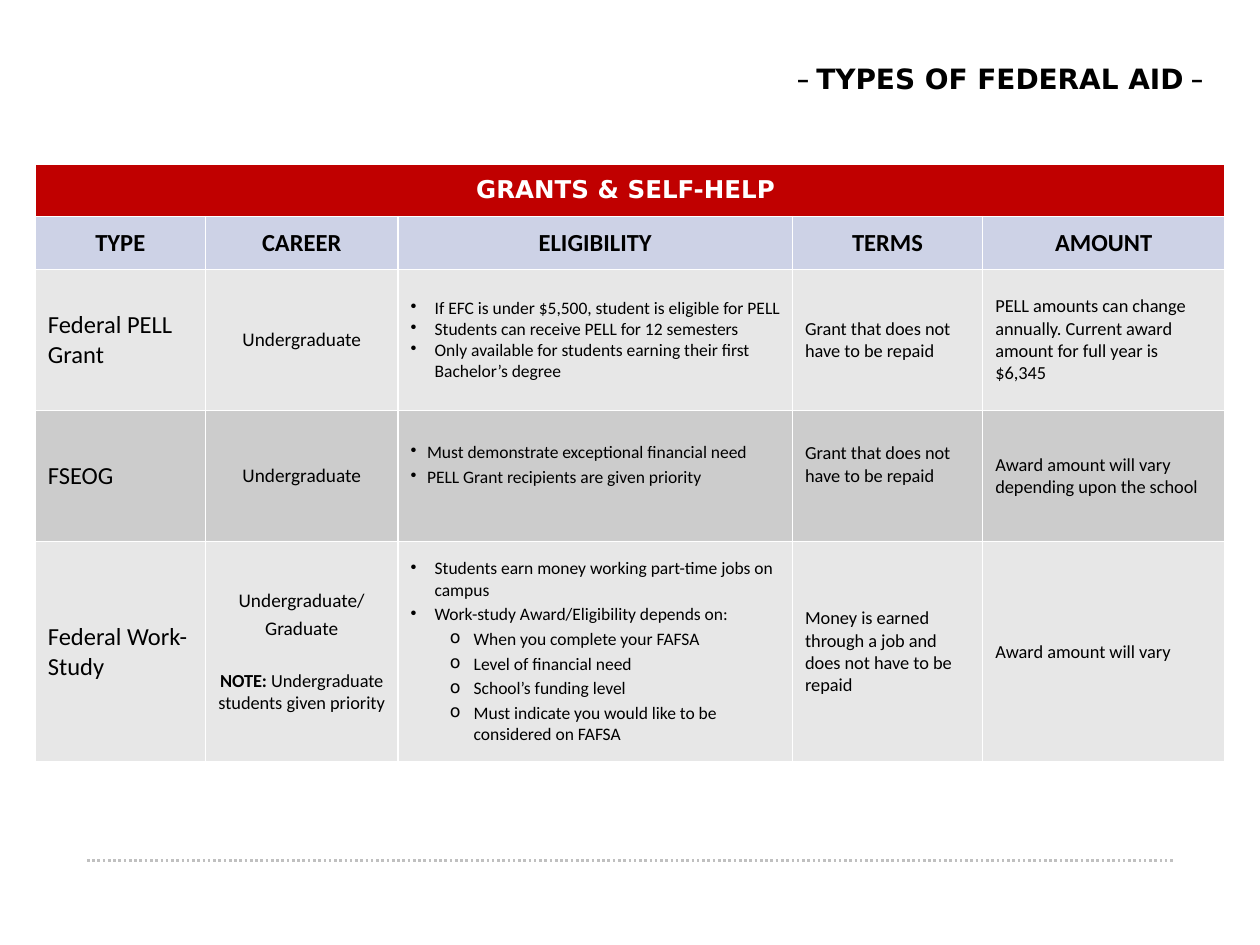
"""Build the federal aid slide with its table of grants and self-help."""
from dataclasses import dataclass

from lxml import etree
from pptx import Presentation
from pptx import util as u
from pptx.dml.color import RGBColor
from pptx.enum import dml, shapes, text
from pptx.oxml import ns


@dataclass(frozen=True)
class Theme:
    body: str = "Calibri"
    head: str = "DejaVu Sans"
    ink: str = "000000"
    white: str = "FFFFFF"
    red: str = "C00000"
    blue: str = "CDD2E6"
    light: str = "E7E7E7"
    dark: str = "CCCCCC"
    rule: str = "C0C0C0"
    title: float = 16
    label: float = 14
    note: float = 11
    small: float = 10.5
    list: float = 10


def node(root, tag, **attrs):
    return etree.SubElement(root, ns.qn(tag), attrs)


class Deck:
    def __init__(self, theme):
        self.theme = theme
        self.prs = Presentation()
        self.prs.slide_width, self.prs.slide_height = u.Inches(10), u.Inches(7.5)
        self.slide = self.prs.slides.add_slide(self.prs.slide_layouts[6])

    def run(self, para, words, **form):
        run = para.add_run()
        run.text = words
        base = {"name": self.theme.body, "size": self.theme.label, "bold": False}
        look = {**base, **form}
        look["size"] = u.Pt(look["size"])
        tint = look.pop("tint", self.theme.ink)
        for key, val in look.items():
            setattr(run.font, key, val)
        run.font.color.rgb = RGBColor.from_string(tint)

    def title(self, box, parts):
        frame = self.slide.shapes.add_textbox(*map(u.Inches, box)).text_frame
        frame.word_wrap = False
        frame.auto_size = text.MSO_AUTO_SIZE.SHAPE_TO_FIT_TEXT
        for words, face in parts:
            self.run(frame.paragraphs[0], words, name=face, size=self.theme.title, bold=True)

    def line(self, x1, y1, x2, y2):
        ends = map(u.Inches, (x1, y1, x2, y2))
        line = self.slide.shapes.add_connector(shapes.MSO_CONNECTOR.STRAIGHT, *ends)
        look = {"width": u.Pt(1.5), "dash_style": dml.MSO_LINE.ROUND_DOT}
        for key, val in look.items():
            setattr(line.line, key, val)
        line.line.color.rgb = RGBColor.from_string(self.theme.rule)
        node(line._element.spPr, "a:effectLst")

    def table(self, left, top, cols, rows):
        box = map(u.Inches, (left, top, sum(cols), sum(rows)))
        grid = self.slide.shapes.add_table(len(rows), len(cols), *box).table
        grid.first_row = grid.horz_banding = False
        for col, wide in zip(grid.columns, cols):
            col.width = u.Inches(wide)
        for row, high in zip(grid.rows, rows):
            row.height = u.Inches(high)
        return grid

    def cell(self, cell, paras, fill, low=0.05, gap=0, **form):
        cell.fill.solid()
        cell.fill.fore_color.rgb = RGBColor.from_string(fill)
        cell.vertical_anchor = text.MSO_ANCHOR.MIDDLE
        cell.margin_bottom = u.Inches(low)
        self.edge(cell)
        for i, item in enumerate(paras):
            para = cell.text_frame.paragraphs[0] if i == 0 else cell.text_frame.add_paragraph()
            self.para(para, item, 0 if i == 0 else gap, gap, form)

    def edge(self, cell):
        props = cell._tc.get_or_add_tcPr()
        for i, side in enumerate("LRTB"):
            line = node(props, f"a:ln{side}", w=str(u.Pt(1)))
            node(node(line, "a:solidFill"), "a:srgbClr", val=self.theme.white)
            props.insert(i, line)

    def para(self, para, item, above, below, form):
        item = item if isinstance(item, dict) else {"runs": [(item, {})]}
        if "mark" in item:
            props = para._p.get_or_add_pPr()
            props.set("marL", str(u.Inches(item["left"])))
            props.set("indent", str(-u.Inches(item["hang"])))
            node(props, "a:buChar", char=item["mark"])
        look = {"alignment": item.get("align", form.get("align")),
                "level": item.get("level", 0),
                "space_before": u.Pt(item.get("above", above)),
                "space_after": u.Pt(below)}
        for key, val in look.items():
            setattr(para, key, val)
        font = {key: val for key, val in form.items() if key != "align"}
        for words, more in item["runs"]:
            self.run(para, words, **{**font, **more})


def dot(words, hang=0.19):
    return {"runs": [(words, {})], "mark": "•", "left": hang, "hang": hang}


def sub(words):
    return {"runs": [(words, {})], "mark": "o", "left": 0.5, "hang": 0.19, "level": 1}


def main():
    look = Theme()
    deck = Deck(look)
    mid = text.PP_ALIGN.CENTER
    deck.line(0.69, 6.83, 9.32, 6.83)
    grid = deck.table(0.28, 1.3, (1.35, 1.53, 3.13, 1.51, 1.92), (0.42, 0.42, 1.12, 1.04, 1.75))

    grid.cell(0, 0).merge(grid.cell(0, 4))
    deck.cell(grid.cell(0, 0), ["GRANTS & SELF-HELP "], look.red,
              name=look.head, tint=look.white, bold=True, align=mid)
    for col, words in enumerate(("TYPE", "CAREER", "ELIGIBILITY", "TERMS", "AMOUNT")):
        deck.cell(grid.cell(1, col), [words], look.blue, bold=True, align=mid)

    repaid = "Grant that does not have to be repaid"
    note = {"runs": [("NOTE: ", {"bold": True, "size": look.small}),
                     ("Undergraduate students given priority", {"size": look.small})],
            "above": 16}
    aid = [
        ("Federal PELL Grant", ["Undergraduate"],
         [dot("If EFC is under $5,500, student is eligible for PELL"),
          dot("Students can receive PELL for 12 semesters"),
          dot("Only available for students earning their first Bachelor’s degree")],
         repaid,
         "PELL amounts can change annually. Current award amount for full year is $6,345",
         look.light, 0, 0.05),
        ("FSEOG", ["Undergraduate"],
         [dot("Must demonstrate exceptional financial need", 0.13),
          dot("PELL Grant recipients are given priority", 0.13)],
         repaid, "Award amount will vary depending upon the school",
         look.dark, 1, 0.23),
        ("Federal Work-Study", ["Undergraduate/", "Graduate", note],
         [dot("Students earn money working part-time jobs on campus"),
          dot("Work-study Award/Eligibility depends on:"),
          sub("When you complete your FAFSA"),
          sub("Level of financial need"),
          sub("School’s funding level"),
          sub("Must indicate you would like to be considered on FAFSA")],
         "Money is earned through a job and does not have to be repaid",
         "Award amount will vary", look.light, 1, 0.05),
    ]
    for row, (kind, career, rules, terms, amount, fill, gap, low) in enumerate(aid, 2):
        forms = (
            ([kind], {"size": look.label}),
            (career, {"size": look.note, "gap": gap, "align": mid}),
            (rules, {"size": look.list, "gap": gap, "low": low}),
            ([terms], {"size": look.small, "low": low}),
            ([amount], {"size": look.small}),
        )
        for col, (paras, form) in enumerate(forms):
            deck.cell(grid.cell(row, col), paras, fill, **form)

    deck.title((6.22, 0.44, 3.5, 0.37),
               [("– ", look.body), ("TYPES OF FEDERAL AID", look.head), (" –", look.body)])
    deck.prs.save("out.pptx")


if __name__ == "__main__":
    main()
